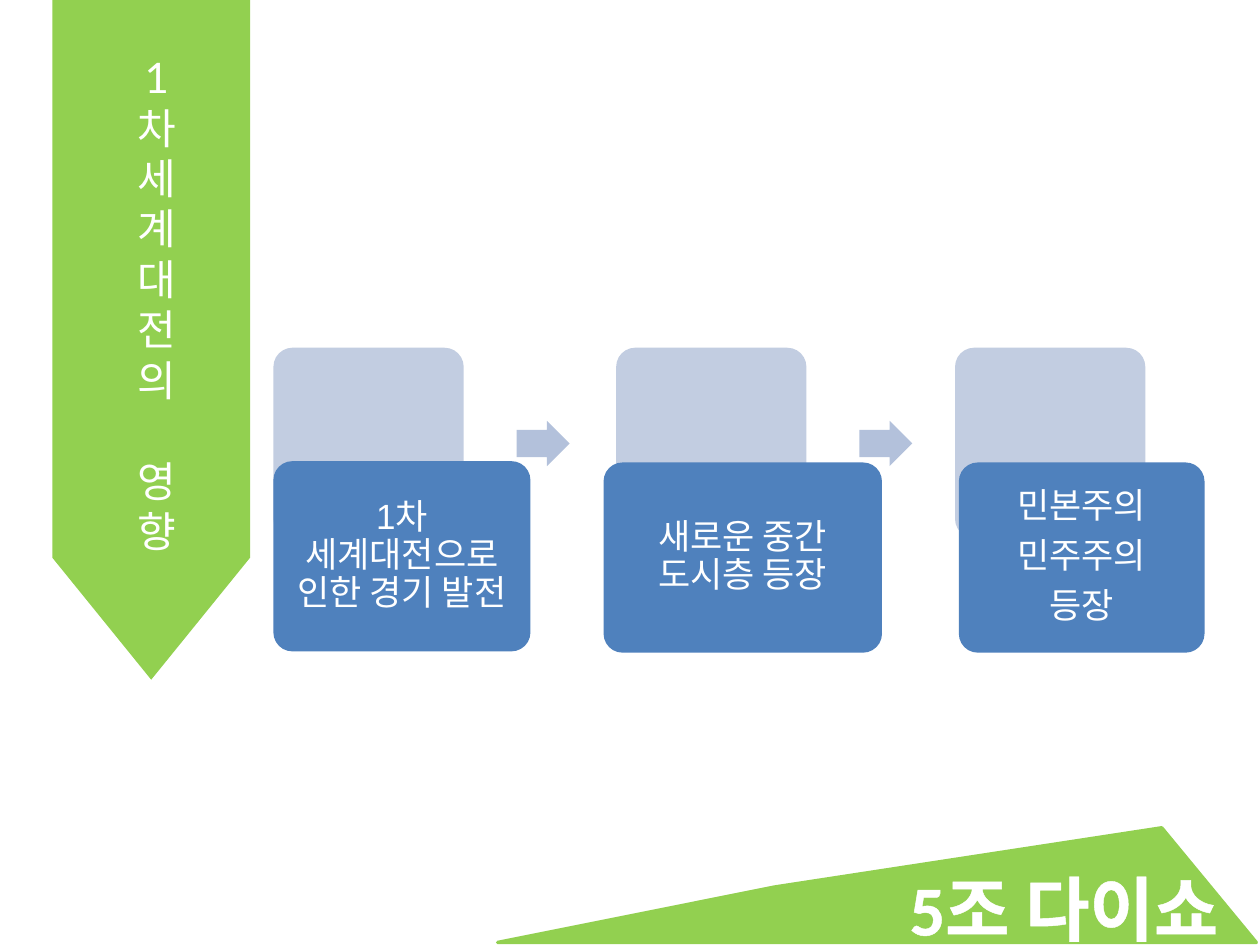
from dataclasses import dataclass

from lxml import etree
from pptx import Presentation
from pptx.dml.color import RGBColor
from pptx.enum.shapes import MSO_SHAPE
from pptx.enum.text import MSO_ANCHOR, MSO_AUTO_SIZE, PP_ALIGN
from pptx.oxml.ns import qn
from pptx.util import Inches, Pt

PENTAGON, ROUNDED, ARROW = MSO_SHAPE.PENTAGON, MSO_SHAPE.ROUNDED_RECTANGLE, MSO_SHAPE.RIGHT_ARROW
TOP, MIDDLE = MSO_ANCHOR.TOP, MSO_ANCHOR.MIDDLE
CENTER, NO_AUTOFIT = PP_ALIGN.CENTER, MSO_AUTO_SIZE.NONE


@dataclass(frozen=True)
class Theme:
    green: str = "92D050"
    blue: str = "4F81BD"
    pale_blue: str = "C2CDE1"
    arrow_blue: str = "B3C1DB"
    white: str = "FFFFFF"
    title_size: int = 24
    step_size: int = 20
    footer_size: int = 40


theme = Theme()
deck = Presentation()
deck.slide_width, deck.slide_height = Inches(10), Inches(7.5)
page = deck.slides.add_slide(deck.slide_layouts[5])


def add_block(kind, left, top, width, height, color, *adjustments):
    block = page.shapes.add_shape(kind, Inches(left), Inches(top), Inches(width), Inches(height))
    block.shadow.inherit = False
    block.fill.solid()
    block.fill.fore_color.rgb = RGBColor.from_string(color)
    block.line.fill.background()
    for index, value in enumerate(adjustments):
        block.adjustments[index] = value
    return block


def write_lines(frame, lines, font, size):
    """Fill the frame with centred white paragraphs and return them."""
    frame.word_wrap = True
    for index, line in enumerate(lines):
        para = frame.paragraphs[0] if index == 0 else frame.add_paragraph()
        para.alignment = CENTER
        span = para.add_run()
        span.text = line
        span.font.name, span.font.size = font, Pt(size)
        span.font.color.rgb = RGBColor.from_string(theme.white)
    return frame.paragraphs


# Footer wedge and group name
corners = [(6.15, 7.04), (9.22, 6.57), (9.97, 7.48), (3.95, 7.48)]
points = [(Inches(x), Inches(y)) for x, y in corners]
outline = page.shapes.build_freeform(*points[0])
outline.add_line_segments(points[1:], close=True)
wedge = outline.convert_to_shape()
wedge.shadow.inherit = False
wedge.fill.solid()
wedge.fill.fore_color.rgb = RGBColor.from_string(theme.green)
wedge.line.color.rgb = RGBColor.from_string(theme.green)
wedge.line.width = Pt(2)

footer = page.shapes.add_textbox(Inches(6.91), Inches(6.82), Inches(3.07), Inches(0.77))
footer_span = write_lines(footer.text_frame, ["5조 다이쇼"], "Calibri", theme.footer_size)[0].runs[0]
footer_span.font.bold = True
text_line = etree.Element(qn("a:ln"), w=str(Pt(1.45)))
line_fill = etree.SubElement(text_line, qn("a:solidFill"))
etree.SubElement(line_fill, qn("a:srgbClr"), val=theme.white)
footer_span.font._element.insert(0, text_line)

# Steps: back card left, front card left, top and width, then the text
steps = [
    (2.17, 2.17, 3.66, 2.04, ["1차 세계대전으로 인한 경기 발전"]),
    (4.89, 4.79, 3.67, 2.21, ["새로운 중간 도시층 등장"]),
    (7.58, 7.61, 3.67, 1.95, ["민본주의", "민주주의", "등장"]),
]
card_size = 1.51
for back_left, left, top, width, lines in steps:
    add_block(ROUNDED, back_left, 2.76, card_size, card_size, theme.pale_blue, 0.1)
    card = add_block(ROUNDED, left, top, width, card_size, theme.blue, 0.1)
    frame = card.text_frame
    frame.vertical_anchor = MIDDLE
    frame.margin_left = frame.margin_right = Inches(0.08)
    frame.margin_top = frame.margin_bottom = Inches(0.08)
    for para in write_lines(frame, lines, "Arial", theme.step_size):
        para.line_spacing = 0.9
        para.space_after = Pt(7)

for left in (4.1, 6.82):
    add_block(ARROW, left, 3.34, 0.42, 0.36, theme.arrow_blue, 0.6, 0.5)

# Title banner, pointing down from the top edge
banner = add_block(PENTAGON, -1.5, 1.91, 5.4, 1.57, theme.green, 0.617)
banner.rotation = 90

title = page.shapes.title
title.left, title.top = Inches(0.93), Inches(0.36)
title.width, title.height = Inches(0.63), Inches(4.14)
title.text_frame.auto_size = NO_AUTOFIT
title.text_frame.vertical_anchor = TOP
title_paras = write_lines(title.text_frame, ["1차세계대전의", "영향"], "Lato", theme.title_size)
title_paras[1].space_before = Pt(29)
page.shapes._spTree.append(title._element)  # in front of the banner

deck.save("out.pptx")
